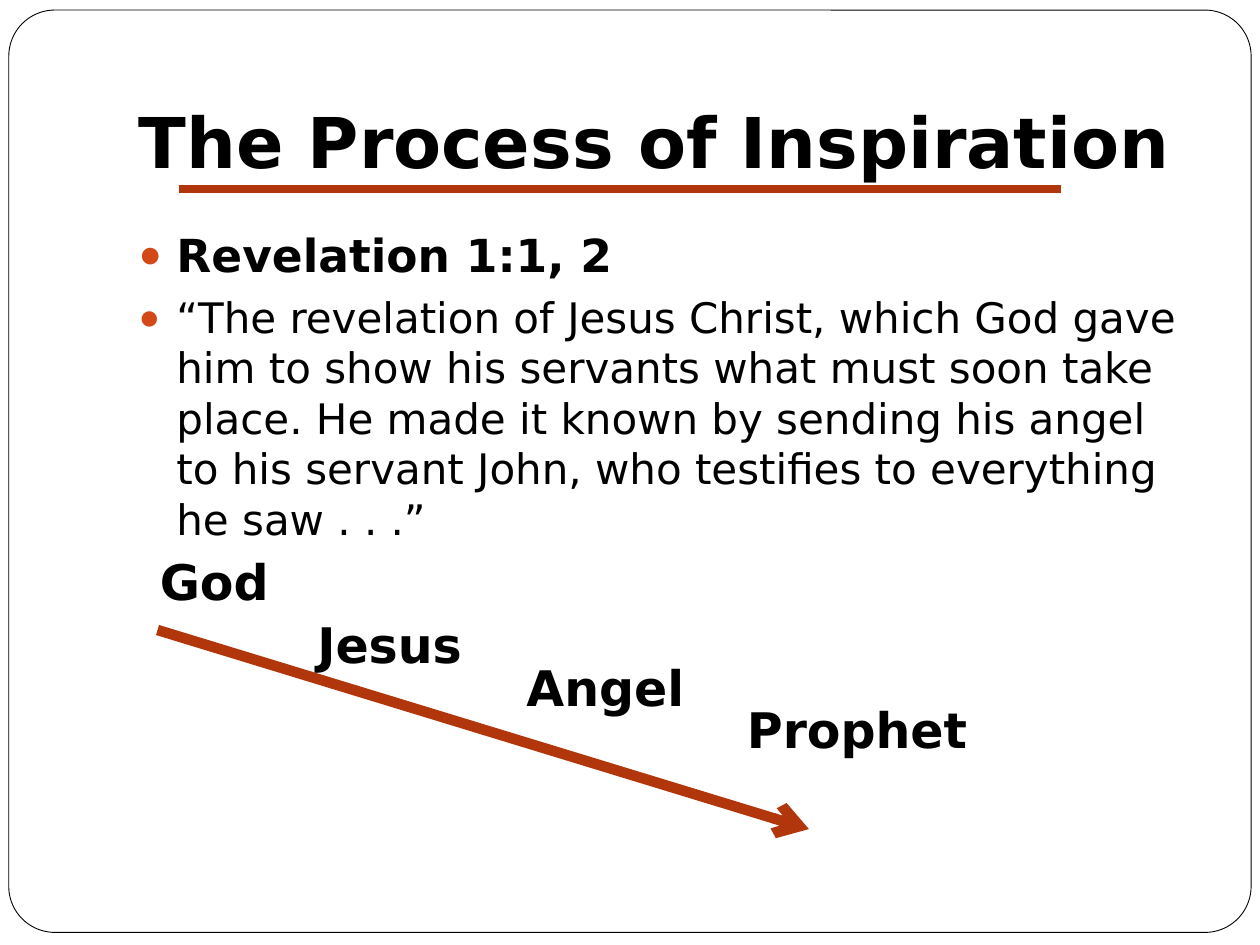
from dataclasses import dataclass

from lxml import etree
from pptx import Presentation
from pptx import util as u
from pptx.dml.color import RGBColor
from pptx.enum import shapes, text
from pptx.oxml import ns


@dataclass(frozen=True)
class Theme:
    font: str = "DejaVu Sans"
    ink: str = "000000"
    paper: str = "FFFFFF"
    accent: str = "B1360B"
    bullet: str = "D34817"
    title: int = 40
    heading: int = 26
    quote: int = 24
    label: int = 28


THEME = Theme()

QUOTE = (
    "“The revelation of Jesus Christ, which God gave him to show his servants "
    "what must soon take place. He made it known by sending his angel to his "
    "servant John, who testifies to everything he saw . . .”"
)

# Label, left, top, width
STEPS = [
    ("God", 1.17, 4.33, 1.42),
    ("Jesus", 2.42, 4.83, 1.42),
    ("Angel", 4.08, 5.17, 1.67),
    ("Prophet", 5.83, 5.5, 2.08),
]


def rgb(value):
    return RGBColor.from_string(value)


def sub(parent, tag, **attrs):
    return etree.SubElement(parent, ns.qn(tag), attrs)


def place(sp, left, top, width, height):
    box = {"left": left, "top": top, "width": width, "height": height}
    for name, value in box.items():
        setattr(sp, name, u.Inches(value))


def write(p, words, size, bold=True):
    p.alignment = text.PP_ALIGN.LEFT
    r = p.add_run()
    r.text = words
    style = {"name": THEME.font, "size": u.Pt(size), "bold": bold}
    for name, value in style.items():
        setattr(r.font, name, value)
    r.font.color.rgb = rgb(THEME.ink)


def add_frame(s):
    sp = s.shapes.add_shape(
        shapes.MSO_SHAPE.ROUNDED_RECTANGLE,
        *map(u.Inches, (0.07, 0.08, 9.86, 7.32)))
    sp.adjustments[0] = 0.05
    sp.shadow.inherit = False
    sp.fill.solid()
    sp.fill.fore_color.rgb = rgb(THEME.paper)
    sp.line.color.rgb = rgb(THEME.ink)
    sp.line.width = u.Pt(0.5)
    # Send behind the placeholders
    s.shapes._spTree.insert(2, sp._element)


def fill_title(sp):
    place(sp, 1, 0.3, 8.5, 1.25)
    tf = sp.text_frame
    layout = {
        "auto_size": text.MSO_AUTO_SIZE.NONE,
        "vertical_anchor": text.MSO_ANCHOR.BOTTOM,
        "margin_bottom": u.Inches(0.1),
    }
    for name, value in layout.items():
        setattr(tf, name, value)
    write(tf.paragraphs[0], "The Process of Inspiration", THEME.title)


def add_bullet(p):
    p.space_before = u.Pt(5.8)
    pPr = p._p.get_or_add_pPr()
    pPr.set("marL", str(u.Inches(0.3)))
    pPr.set("indent", str(u.Inches(-0.3)))
    sub(sub(pPr, "a:buClr"), "a:srgbClr", val=THEME.bullet)
    sub(pPr, "a:buSzPct", val="85000")
    sub(pPr, "a:buChar", char="●")


def fill_body(sp):
    place(sp, 1, 1.75, 8.5, 2.58)
    tf = sp.text_frame
    tf.auto_size = text.MSO_AUTO_SIZE.NONE
    items = [("Revelation 1:1, 2", THEME.heading, True),
             (QUOTE, THEME.quote, False)]
    for i, (words, size, bold) in enumerate(items):
        p = tf.add_paragraph() if i else tf.paragraphs[0]
        add_bullet(p)
        write(p, words, size, bold)


def add_label(s, words, left, top, width):
    sp = s.shapes.add_textbox(*map(u.Inches, (left, top, width, 0.57)))
    tf = sp.text_frame
    tf.word_wrap = True
    tf.auto_size = text.MSO_AUTO_SIZE.SHAPE_TO_FIT_TEXT
    write(tf.paragraphs[0], words, THEME.label)


def add_line(s, start, end, width, arrow=False):
    line = s.shapes.add_connector(
        shapes.MSO_CONNECTOR.STRAIGHT, *map(u.Inches, start + end))
    line.line.color.rgb = rgb(THEME.accent)
    line.line.width = u.Pt(width)
    if arrow:
        sub(line.line._get_or_add_ln(), "a:tailEnd", type="arrow")
    sub(line._element.spPr, "a:effectLst")


def main():
    prs = Presentation()
    prs.slide_width, prs.slide_height = u.Inches(10), u.Inches(7.5)
    s = prs.slides.add_slide(prs.slide_layouts[1])

    # Frame, title and scripture text
    add_frame(s)
    fill_title(s.shapes.title)
    fill_body(s.placeholders[1])

    # Chain of inspiration, from God to the prophet
    for step in STEPS:
        add_label(s, *step)
    add_line(s, (1.25, 5), (6.42, 6.58), 6, arrow=True)

    # Rule under the title
    add_line(s, (1.42, 1.5), (8.42, 1.5), 4.5)

    prs.save("out.pptx")


if __name__ == "__main__":
    main()
